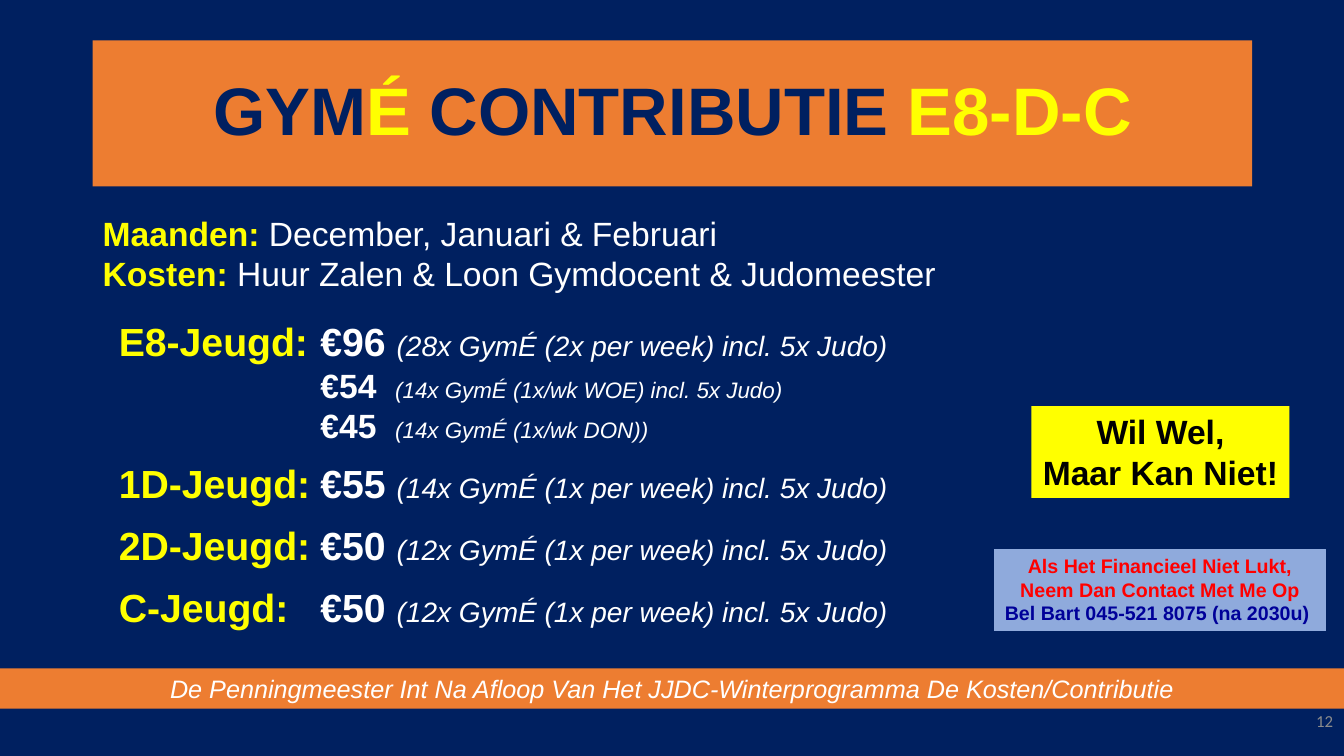
from pptx import Presentation
from pptx.dml.color import RGBColor
from pptx.enum.shapes import MSO_SHAPE as Shape
from pptx.enum.text import MSO_ANCHOR as Anchor, PP_ALIGN as Align
from pptx.oxml import parse_xml
from pptx.oxml.ns import nsdecls
from pptx.util import Inches, Pt

NAVY, ORANGE, YELLOW, WHITE = "002060", "ED7D31", "FFFF00", "FFFFFF"
BLUE, RED, INK, BLACK, GREY = "8FAADC", "FF0000", "000099", "000000", "8C8C8C"


def color(target, code):
    """Give a fill or a font a solid colour."""
    if hasattr(target, "solid"):
        target.solid()
        target.fore_color.rgb = RGBColor.from_string(code)
    else:
        target.color.rgb = RGBColor.from_string(code)


def add_box(at, lines, align=Align.LEFT, fill=None, wrap=True, face="Arial"):
    """Add a box; each line is a list of (text, size, colour, style) runs."""
    box = slide.shapes.add_shape(Shape.RECTANGLE, *map(Inches, at))
    box.shadow.inherit = False
    box.line.fill.background()
    if fill:
        color(box.fill, fill)
    else:
        box.fill.background()
    frame = box.text_frame
    frame.word_wrap = wrap
    frame.vertical_anchor = Anchor.TOP
    for i, line in enumerate(lines):
        para = frame.paragraphs[0] if i == 0 else frame.add_paragraph()
        para.alignment = align
        for text, size, code, style in line:
            run = para.add_run()
            run.text = text
            font = run.font
            font.name, font.size = face, Pt(size)
            font.bold, font.italic = style == "b", style == "i"
            color(font, code)
    return box


deck = Presentation()
deck.slide_width, deck.slide_height = Inches(13.33), Inches(7.5)
slide = deck.slides.add_slide(deck.slide_layouts[6])
color(slide.background.fill, NAVY)

# Title
title = add_box((0.92, 0.4, 11.5, 1.45), [[
    ("GYM", 48, NAVY, "b"), ("É", 48, YELLOW, "b"),
    (" CONTRIBUTIE ", 48, NAVY, "b"), ("E8-D-C", 48, YELLOW, "b"),
]], Align.CENTER, ORANGE)
title.text_frame.vertical_anchor = Anchor.MIDDLE
title.text_frame.paragraphs[0].line_spacing = 0.9

# Page number
page = add_box((10.32, 6.95, 3, 0.4), [[("12", 12, GREY, "")]],
               Align.RIGHT, face="Calibri")
page.text_frame.vertical_anchor = Anchor.MIDDLE

# Fees: a label, a price and a note per row; rows without a label are smaller
fees = [
    ("E8-Jeugd:", "€96 ", "(28x GymÉ (2x per week) incl. 5x Judo)"),
    ("", "€54  ", "(14x GymÉ (1x/wk WOE) incl. 5x Judo)"),
    ("", "€45  ", "(14x GymÉ (1x/wk DON))"),
    ("1D-Jeugd:", "€55 ", "(14x GymÉ (1x per week) incl. 5x Judo)"),
    ("2D-Jeugd:", "€50 ", "(12x GymÉ (1x per week) incl. 5x Judo)"),
    ("C-Jeugd:", "€50 ", "(12x GymÉ (1x per week) incl. 5x Judo)"),
]
rows = []
for label, price, note in fees:
    big, small = (28, 20) if label else (24, 16)
    rows.append([(label + "\t", big, YELLOW, "b"), (price, big, WHITE, "b"),
                 (note, small, WHITE, "i")])
table = add_box((1.08, 3.1, 7.9, 3.4), rows)
for i, para in enumerate(table.text_frame.paragraphs):
    if i and fees[i][0]:
        para.space_before = Pt(10.4)
    para._p.get_or_add_pPr().append(parse_xml(
        f'<a:tabLst {nsdecls("a")}><a:tab pos="{Inches(2)}" algn="l"/></a:tabLst>'))

# Months and costs
add_box((0.92, 2.06, 8.7, 0.91), [
    [("Maanden: ", 24, YELLOW, "b"),
     ("December, Januari & Februari", 24, WHITE, "")],
    [("Kosten:", 24, YELLOW, "b"),
     (" Huur Zalen & Loon Gymdocent & Judomeester", 24, WHITE, "")],
])

# Call-out and contact
add_box((10.23, 4.03, 2.56, 0.91), [
    [(text, 24, BLACK, "b")] for text in ("Wil Wel,", "Maar Kan Niet!")
], Align.CENTER, YELLOW, wrap=False)
contact = add_box((9.86, 5.45, 3.29, 0.81), [
    [("Als Het Financieel Niet Lukt,", 14, RED, "b")],
    [("Neem Dan Contact Met Me Op", 14, RED, "b")],
    [("Bel Bart 045-521 8075 (na 2030u) ", 14, INK, "b")],
], Align.CENTER, BLUE, wrap=False)
color(contact.line.fill, BLUE)
contact.line.width = Pt(0.75)

# Footer band
add_box((0, 6.63, 13.33, 0.4), [[(
    "De Penningmeester Int Na Afloop Van Het JJDC-Winterprogramma "
    "De Kosten/Contributie", 18, WHITE, "i")]], Align.CENTER, ORANGE)

deck.save("out.pptx")
